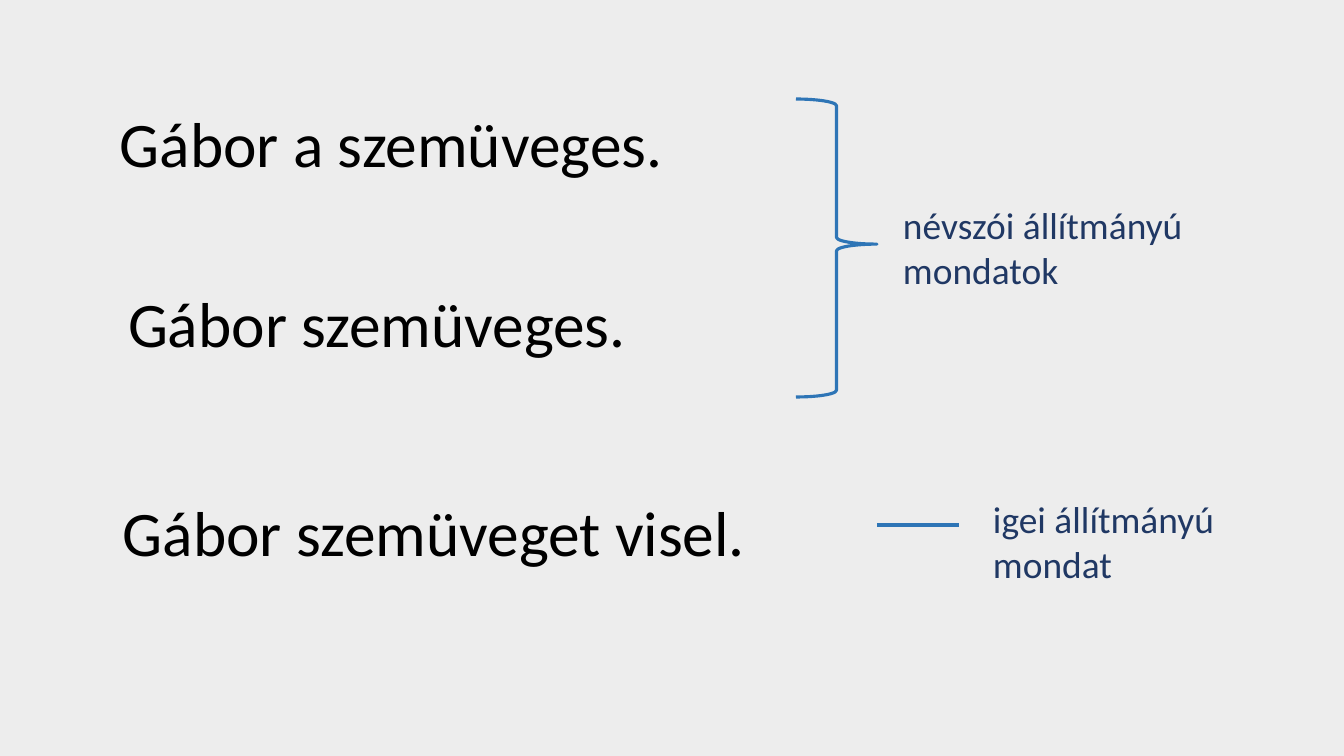
"""Builds a slide sorting three Hungarian sentences by predicate type."""
from lxml.etree import SubElement
from pptx import Presentation
from pptx.dml.color import RGBColor
from pptx.enum.shapes import MSO_CONNECTOR as CONNECTOR, MSO_SHAPE as SHAPE
from pptx.oxml.ns import qn
from pptx.util import Pt

BACKGROUND = RGBColor(0xED, 0xED, 0xED)
BLACK = RGBColor(0x00, 0x00, 0x00)
NAVY = RGBColor(0x20, 0x38, 0x64)
BLUE = RGBColor(0x2E, 0x75, 0xB6)
FONT = "Calibri"
SENTENCE_SIZE, LABEL_SIZE = 45.3, 26.7
LINE_WIDTH = 2.25
WIDE_INSETS, NORMAL_INSETS = (13, 13), (10, 5)

SENTENCES = [
    ("Gábor a szemüveges.", (110, 99, 671, 87), NORMAL_INSETS),
    ("Gábor szemüveges.", (115, 271, 632, 126), WIDE_INSETS),
    ("Gábor szemüveget visel.", (110, 480, 768, 126), WIDE_INSETS),
]
LABELS = [
    ("névszói állítmányú mondatok", (893, 197, 356, 101), NORMAL_INSETS),
    ("igei állítmányú mondat", (983, 491, 267, 101), NORMAL_INSETS),
]
NOMINAL_BRACE = (796, 99, 81, 298)
BRACE_CURVE, BRACE_POINT = 0.083, 0.487
VERBAL_DASH = (877, 525, 959, 525)


def px(*lengths):
    return [round(length * 914400 / 100.8) for length in lengths]


def add_text(slide, wording, place, insets, size, color):
    frame = slide.shapes.add_textbox(*px(*place)).text_frame
    frame.word_wrap = True
    side, edge = px(*insets)
    frame.margin_left = frame.margin_right = side
    frame.margin_top = frame.margin_bottom = edge
    run = frame.paragraphs[0].add_run()
    run.text = wording
    run.font.name = FONT
    run.font.size = Pt(size)
    run.font.color.rgb = color


def draw_line(line):
    line.color.rgb = BLUE
    line.width = Pt(LINE_WIDTH)


def main():
    deck = Presentation()
    deck.slide_width, deck.slide_height = px(1344, 756)
    slide = deck.slides.add_slide(deck.slide_layouts[6])
    slide.background.fill.solid()
    slide.background.fill.fore_color.rgb = BACKGROUND

    for sentence in SENTENCES:
        add_text(slide, *sentence, SENTENCE_SIZE, BLACK)
    for label in LABELS:
        add_text(slide, *label, LABEL_SIZE, NAVY)

    brace = slide.shapes.add_shape(SHAPE.RIGHT_BRACE, *px(*NOMINAL_BRACE))
    brace.adjustments[0] = BRACE_CURVE
    brace.adjustments[1] = BRACE_POINT
    brace.shadow.inherit = False
    brace.fill.background()
    draw_line(brace.line)

    dash = slide.shapes.add_connector(CONNECTOR.STRAIGHT, *px(*VERBAL_DASH))
    draw_line(dash.line)
    SubElement(dash._element.spPr, qn("a:effectLst"))

    deck.save("out.pptx")


if __name__ == "__main__":
    main()
